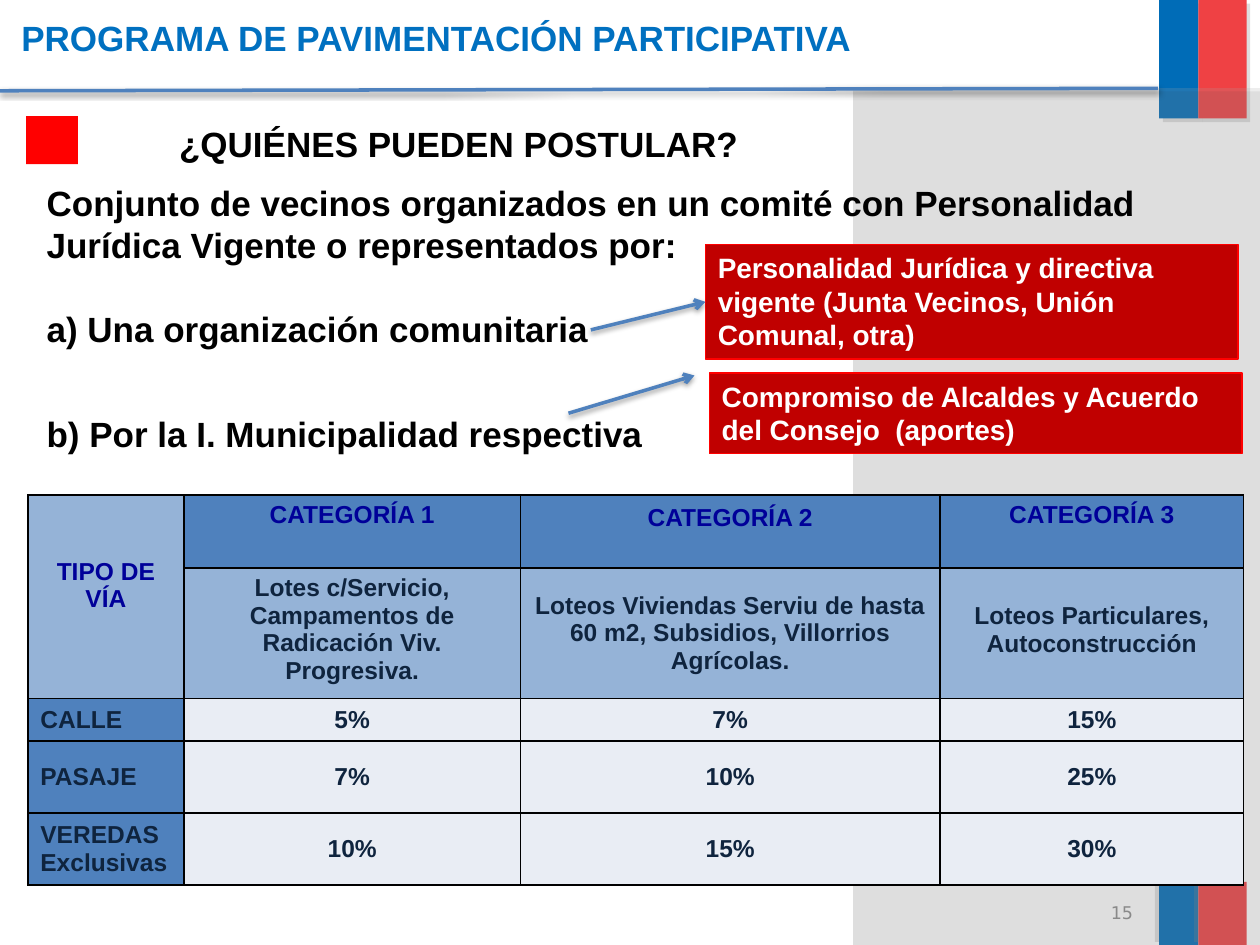
"""Build the slide on who may apply to the participatory paving programme."""
import pptx
import pptx.dml.color
import pptx.enum.shapes
import pptx.enum.text
import pptx.oxml
import pptx.oxml.ns
import pptx.util
from lxml import etree

Cm = pptx.util.Cm
Pt = pptx.util.Pt
RGBColor = pptx.dml.color.RGBColor
ALIGN = pptx.enum.text.PP_ALIGN
ANCHOR = pptx.enum.text.MSO_ANCHOR
RECTANGLE = pptx.enum.shapes.MSO_SHAPE.RECTANGLE
STRAIGHT = pptx.enum.shapes.MSO_CONNECTOR.STRAIGHT
qn = pptx.oxml.ns.qn

BLACK = RGBColor(0x00, 0x00, 0x00)
WHITE = RGBColor(0xFF, 0xFF, 0xFF)
RED = RGBColor(0xFF, 0x00, 0x00)
DARK_RED = RGBColor(0xC0, 0x00, 0x00)
FLAG_BLUE = RGBColor(0x00, 0x6C, 0xB7)
FLAG_RED = RGBColor(0xEF, 0x41, 0x44)
GREY = RGBColor(0xA6, 0xA6, 0xA6)
SHADOW_GREY = RGBColor(0x80, 0x80, 0x80)
NUMBER_GREY = RGBColor(0x89, 0x89, 0x89)
TITLE_BLUE = RGBColor(0x00, 0x70, 0xC0)
BLUE = RGBColor(0x4F, 0x81, 0xBD)
LIGHT_BLUE = RGBColor(0x95, 0xB3, 0xD7)
PALE_BLUE = RGBColor(0xE9, 0xED, 0xF4)
HEADING_BLUE = RGBColor(0x00, 0x00, 0x99)
NAVY = RGBColor(0x0F, 0x24, 0x3E)

BOLD_20 = {"name": "Arial", "size": Pt(20), "bold": True}
BOLD_16 = {**BOLD_20, "size": Pt(16)}
BOLD_14 = {**BOLD_20, "size": Pt(14)}
NUMBER_FONT = {"name": "DejaVu Sans", "size": Pt(10), "bold": False}


def write(frame, texts, font_format, colour, align=ALIGN.LEFT, gaps=(0,)):
    frame.word_wrap = True
    for index, (text, gap) in enumerate(zip(texts, gaps)):
        para = frame.add_paragraph() if index else frame.paragraphs[0]
        para.alignment = align
        if gap:
            para.space_before = Pt(gap)
        span = para.add_run()
        span.text = text
        span.font.color.rgb = colour
        for key, value in font_format.items():
            setattr(span.font, key, value)


def cast_shadow(item, colour, alpha, blur, distance, angle):
    properties = item.element.spPr
    effects = properties.find(qn("a:effectLst"))
    if effects is None:
        effects = etree.SubElement(properties, qn("a:effectLst"))
    shadow = etree.SubElement(
        effects, qn("a:outerShdw"), blurRad=str(Pt(blur)), dist=str(Pt(distance)),
        dir=str(angle * 60000), algn="ctr", rotWithShape="0")
    tint = etree.SubElement(shadow, qn("a:srgbClr"), val=str(colour))
    etree.SubElement(tint, qn("a:alpha"), val=str(alpha * 1000))


deck = pptx.Presentation()
deck.slide_width, deck.slide_height = Cm(25.4), Cm(19.05)
page = deck.slides.add_slide(deck.slide_layouts[6])

PANELS = [
    (23.37, 0, 0.79, 2.39, FLAG_BLUE, (SHADOW_GREY, 25, 0, 3, 45)),
    (24.16, 0, 0.97, 2.39, FLAG_RED, (SHADOW_GREY, 25, 0, 3, 45)),
    (23.37, 17.78, 0.79, 1.27, FLAG_BLUE, (SHADOW_GREY, 25, 0, 3, 215)),
    (24.16, 17.78, 0.97, 1.27, FLAG_RED, (SHADOW_GREY, 25, 0, 3, 215)),
    (17.2, 1.78, 8.2, 17.27, GREY, (BLACK, 35, 0, 1.8, 90)),
    (0.53, 2.34, 1.04, 0.97, RED, None),
]
for left, top, width, height, colour, shadow in PANELS:
    panel = page.shapes.add_shape(RECTANGLE, Cm(left), Cm(top), Cm(width), Cm(height))
    panel.shadow.inherit = False
    panel.fill.solid()
    panel.fill.fore_color.rgb = colour
    panel.line.fill.background()
    if colour == GREY:
        tint = panel.element.spPr.find(qn("a:solidFill"))[0]
        etree.SubElement(tint, qn("a:alpha"), val="20000")
    if shadow:
        cast_shadow(panel, *shadow)

REQUIREMENTS = [
    "Conjunto de vecinos organizados en un comité con Personalidad Jurídica Vigente o representados por:",
    "a) Una organización comunitaria",
    "b) Por la I. Municipalidad respectiva",
]
TEXT_BOXES = [
    (0.69, 3.53, 24.36, 6.65, 0.25, REQUIREMENTS, BOLD_20, BLACK, ALIGN.LEFT, (0, 24, 36)),
    (2.11, 2.34, 21.26, 1.12, 1.5, ["¿QUIÉNES PUEDEN POSTULAR?"], BOLD_20, BLACK, ALIGN.LEFT, (0,)),
    (0.05, 0.2, 23.32, 1.04, 0.38, ["PROGRAMA DE PAVIMENTACIÓN PARTICIPATIVA"],
     BOLD_20, TITLE_BLUE, ALIGN.LEFT, (0,)),
    (17.17, 18.14, 5.92, 0.53, 0.25, ["15"], NUMBER_FONT, NUMBER_GREY, ALIGN.RIGHT, (0,)),
]
for left, top, width, height, margin, *content in TEXT_BOXES:
    box = page.shapes.add_textbox(Cm(left), Cm(top), Cm(width), Cm(height))
    box.text_frame.margin_left = Cm(margin)
    write(box.text_frame, *content)
box.text_frame.vertical_anchor = ANCHOR.MIDDLE

CALLOUTS = [
    (14.22, 4.93, 2.31, "Personalidad Jurídica y directiva vigente (Junta Vecinos, Unión Comunal, otra)"),
    (14.3, 7.52, 1.63, "Compromiso de Alcaldes y Acuerdo del Consejo  (aportes)"),
]
callouts = []
for left, top, height, text in CALLOUTS:
    callout = page.shapes.add_shape(RECTANGLE, Cm(left), Cm(top), Cm(10.74), Cm(height))
    callout.shadow.inherit = False
    callout.fill.solid()
    callout.fill.fore_color.rgb = DARK_RED
    callout.line.color.rgb = RED
    callout.line.width = Pt(0.75)
    callout.text_frame.vertical_anchor = ANCHOR.TOP
    write(callout.text_frame, [text], BOLD_16, WHITE)
    callouts.append(callout)

LINES = [
    (11.91, 6.65, 14.22, 6.1, True, callouts[0]),
    (11.46, 8.33, 14, 7.57, True, None),
    (0, 1.83, 23.34, 1.78, False, None),
]
for x1, y1, x2, y2, has_arrow, target in LINES:
    line = page.shapes.add_connector(STRAIGHT, Cm(x1), Cm(y1), Cm(x2), Cm(y2))
    line.line.color.rgb = BLUE
    line.line.width = Pt(2)
    if target:
        line.end_connect(target, 1)
    if has_arrow:
        etree.SubElement(line.element.spPr.find(qn("a:ln")), qn("a:tailEnd"), type="arrow")
    cast_shadow(line, BLACK, 38, 3.1, 1.6, 90)

COLUMNS = [3.15, 6.78, 8.46, 6.12]
ROWS = [1.47, 2.62, 0.86, 1.45, 1.45]
CONTENT = [
    ["TIPO DE VÍA", "CATEGORÍA 1", "CATEGORÍA 2", "CATEGORÍA 3"],
    ["", "Lotes c/Servicio, Campamentos de Radicación Viv. Progresiva.",
     "Loteos Viviendas Serviu de hasta 60 m2, Subsidios, Villorrios Agrícolas.",
     "Loteos Particulares, Autoconstrucción"],
    ["CALLE", "5%", "7%", "15%"],
    ["PASAJE", "7%", "10%", "25%"],
    ["VEREDAS Exclusivas", "10%", "15%", "30%"],
]
TOP_MARGINS = {(0, 0): 1.27, (0, 1): 0.13, (0, 2): 0.18, (0, 3): 0.13, (1, 1): 0.13, (1, 3): 0.7}

table = page.shapes.add_table(
    len(ROWS), len(COLUMNS), Cm(0.56), Cm(9.98), Cm(sum(COLUMNS)), Cm(sum(ROWS))).table
table.first_row = table.horz_banding = False
for column, width in zip(table.columns, COLUMNS):
    column.width = Cm(width)
for row, height in zip(table.rows, ROWS):
    row.height = Cm(height)
table.cell(0, 0).merge(table.cell(1, 0))

for r, texts in enumerate(CONTENT):
    for c, text in enumerate(texts):
        cell = table.cell(r, c)
        properties = cell._tc.get_or_add_tcPr()
        for side in ("a:lnL", "a:lnR", "a:lnT", "a:lnB"):
            border = etree.SubElement(properties, qn(side), w=str(Pt(1)))
            paint = etree.SubElement(border, qn("a:solidFill"))
            etree.SubElement(paint, qn("a:srgbClr"), val=str(BLACK))
        cell.fill.solid()
        if r < 2:
            cell.fill.fore_color.rgb = BLUE if r == 0 and c else LIGHT_BLUE
        else:
            cell.fill.fore_color.rgb = PALE_BLUE if c else BLUE
        if (r, c) in TOP_MARGINS:
            cell.vertical_anchor = ANCHOR.TOP
            cell.margin_top = Cm(TOP_MARGINS[r, c])
        else:
            cell.vertical_anchor = ANCHOR.MIDDLE
        if text:
            write(cell.text_frame, [text], BOLD_14, NAVY if r else HEADING_BLUE,
                  ALIGN.LEFT if r > 1 and c == 0 else ALIGN.CENTER)

deck.save("out.pptx")
